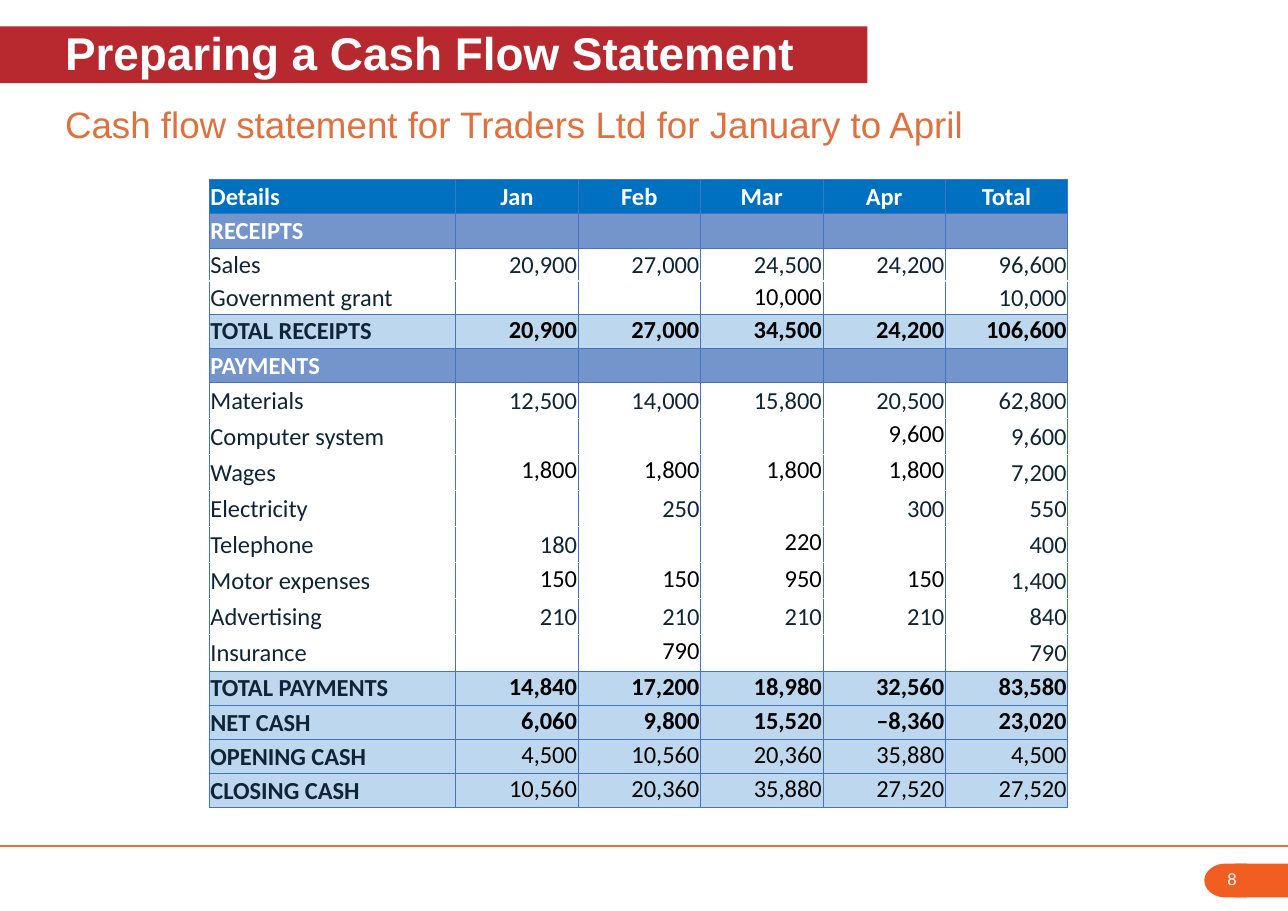
from dataclasses import dataclass

from lxml import etree
from pptx import Presentation
from pptx.dml.color import RGBColor
from pptx.enum.shapes import MSO_CONNECTOR, MSO_SHAPE
from pptx.enum.text import MSO_ANCHOR, MSO_AUTO_SIZE, PP_ALIGN
from pptx.oxml.ns import qn
from pptx.util import Pt

LEFT, CENTER, RIGHT = PP_ALIGN.LEFT, PP_ALIGN.CENTER, PP_ALIGN.RIGHT
TOP, MIDDLE = MSO_ANCHOR.TOP, MSO_ANCHOR.MIDDLE
NO_AUTOFIT = MSO_AUTO_SIZE.NONE
STRAIGHT = MSO_CONNECTOR.STRAIGHT
DELAY, RECTANGLE = MSO_SHAPE.FLOWCHART_DELAY, MSO_SHAPE.RECTANGLE


@dataclass(frozen=True)
class Theme:
    heading_font: str = "Arial"
    table_font: str = "Calibri"
    title_size: float = 30
    subtitle_size: float = 24
    table_size: float = 16
    page_size: float = 11
    white: str = "FFFFFF"
    black: str = "000000"
    ink: str = "0F2537"
    red: str = "B8292F"
    orange: str = "DF713E"
    tab_orange: str = "F25E22"
    header_blue: str = "0070C0"
    section_blue: str = "7395CB"
    total_blue: str = "BDD7EE"
    border_blue: str = "4472C4"


theme = Theme()


def style_text(paragraph, font, size, color, bold=False):
    for run in paragraph.runs:
        run.font.name = font
        run.font.size = Pt(size)
        run.font.bold = bold
        run.font.color.rgb = RGBColor.from_string(color)


def add_border(cell, side):
    border = etree.SubElement(cell._tc.get_or_add_tcPr(), qn(f"a:ln{side}"), w=str(Pt(0.5)))
    fill = etree.SubElement(border, qn("a:solidFill"))
    etree.SubElement(fill, qn("a:srgbClr"), val=theme.border_blue)


SLIDE_WIDTH = 841.68
presentation = Presentation()
presentation.slide_width = Pt(SLIDE_WIDTH)
presentation.slide_height = Pt(595.44)
slide = presentation.slides.add_slide(presentation.slide_layouts[1])
shapes = slide.shapes

# Footer rule and page tab
footer_rule = shapes.add_connector(STRAIGHT, Pt(0), Pt(553), Pt(SLIDE_WIDTH), Pt(553))
footer_rule.line.color.rgb = RGBColor.from_string(theme.orange)
footer_rule.line.width = Pt(0.75)
etree.SubElement(footer_rule._element.spPr, qn("a:effectLst"))

for outline, left, width, angle in ((DELAY, 787, 28, 180), (RECTANGLE, 807, 34.68, 0)):
    page_tab = shapes.add_shape(outline, Pt(left), Pt(564.4), Pt(width), Pt(22.2))
    page_tab.rotation = angle
    page_tab.shadow.inherit = False
    page_tab.fill.solid()
    page_tab.fill.fore_color.rgb = RGBColor.from_string(theme.tab_orange)
    page_tab.line.fill.background()

page_number = shapes.add_textbox(Pt(795), Pt(564.4), Pt(40), Pt(20)).text_frame
page_number.word_wrap = True
page_number.text = "8"
style_text(page_number.paragraphs[0], theme.heading_font, theme.page_size, theme.white)

# Title and subtitle
title, subtitle = shapes.title, slide.placeholders[1]
title.fill.solid()
title.fill.fore_color.rgb = RGBColor.from_string(theme.red)
for heading, words, top, width, height, size, color, bold in (
    (title, "Preparing a Cash Flow Statement", 17.2, 566.8, 37.2,
     theme.title_size, theme.white, True),
    (subtitle, "Cash flow statement for Traders Ltd for January to April", 64.2, SLIDE_WIDTH, 36.8,
     theme.subtitle_size, theme.orange, False),
):
    heading.left, heading.top = Pt(0), Pt(top)
    heading.width, heading.height = Pt(width), Pt(height)
    frame = heading.text_frame
    frame.text = words
    frame.word_wrap = True
    frame.auto_size = NO_AUTOFIT
    frame.vertical_anchor = MIDDLE
    frame.margin_left = frame.margin_top = frame.margin_right = Pt(0)
    frame.margin_bottom = Pt(3.6)
    line = frame.paragraphs[0]
    line.alignment = LEFT
    line.space_before = Pt(0)
    properties = line._p.get_or_add_pPr()
    properties.set("marL", str(Pt(42.5)))
    properties.set("indent", "0")
    etree.SubElement(properties, qn("a:buNone"))
    style_text(line, theme.heading_font, size, color, bold)

# Cash flow figures: kind of row, then its cells
HEADER, SECTION, ITEM, TOTAL, BALANCE = "header", "section", "item", "total", "balance"
cash_flow = [
    (HEADER, "Details", "Jan", "Feb", "Mar", "Apr", "Total"),
    (SECTION, "RECEIPTS", "", "", "", "", ""),
    (ITEM, "Sales", "20,900", "27,000", "24,500", "24,200", "96,600"),
    (ITEM, "Government grant", "", "", "10,000", "", "10,000"),
    (TOTAL, "TOTAL RECEIPTS", "20,900", "27,000", "34,500", "24,200", "106,600"),
    (SECTION, "PAYMENTS", "", "", "", "", ""),
    (ITEM, "Materials", "12,500", "14,000", "15,800", "20,500", "62,800"),
    (ITEM, "Computer system", "", "", "", "9,600", "9,600"),
    (ITEM, "Wages", "1,800", "1,800", "1,800", "1,800", "7,200"),
    (ITEM, "Electricity", "", "250", "", "300", "550"),
    (ITEM, "Telephone", "180", "", "220", "", "400"),
    (ITEM, "Motor expenses", "150", "150", "950", "150", "1,400"),
    (ITEM, "Advertising", "210", "210", "210", "210", "840"),
    (ITEM, "Insurance", "", "790", "", "", "790"),
    (TOTAL, "TOTAL PAYMENTS", "14,840", "17,200", "18,980", "32,560", "83,580"),
    (TOTAL, "NET CASH", "6,060", "9,800", "15,520", "–8,360", "23,020"),
    (BALANCE, "OPENING CASH", "4,500", "10,560", "20,360", "35,880", "4,500"),
    (BALANCE, "CLOSING CASH", "10,560", "20,360", "35,880", "27,520", "27,520"),
]
row_fills = {HEADER: theme.header_blue, SECTION: theme.section_blue, ITEM: theme.white,
             TOTAL: theme.total_blue, BALANCE: theme.total_blue}
# Item months set in black at the top of the cell
black_months = {"Government grant": {3}, "Computer system": {4}, "Wages": {1, 2, 3, 4},
                "Telephone": {3}, "Motor expenses": {1, 2, 3, 4}, "Insurance": {2}}
GRANT_ROW = 3
row_heights = [22.35 if kind != ITEM else 21.55 if number <= GRANT_ROW else 23.6
               for number, (kind, *_) in enumerate(cash_flow)]
column_widths = [161] + [80] * 5

# Cash flow table
table = shapes.add_table(len(cash_flow), len(column_widths), Pt(136.8), Pt(117.4),
                         Pt(sum(column_widths)), Pt(sum(row_heights))).table
table.first_row = table.horz_banding = False
for column, width in zip(table.columns, column_widths):
    column.width = Pt(width)

for number, (kind, *entries) in enumerate(cash_flow):
    table.rows[number].height = Pt(row_heights[number])
    joins_above = kind == ITEM and cash_flow[number - 1][0] == ITEM
    joins_below = kind == ITEM and cash_flow[number + 1][0] == ITEM
    for position, entry in enumerate(entries):
        cell = table.cell(number, position)
        is_label = position == 0
        is_black = not is_label and (
            kind in (TOTAL, BALANCE) or position in black_months.get(entries[0], ()))

        for side in "LRTB":
            if not (side == "T" and joins_above or side == "B" and joins_below):
                add_border(cell, side)
        cell.fill.solid()
        cell.fill.fore_color.rgb = RGBColor.from_string(row_fills[kind])
        cell.margin_left = cell.margin_top = cell.margin_right = Pt(0.72)
        cell.margin_bottom = Pt(0)
        cell.vertical_anchor = TOP if is_black else MIDDLE

        amount = cell.text_frame.paragraphs[0]
        if not entry:
            end_mark = etree.SubElement(amount._p, qn("a:endParaRPr"))
            end_mark.set("sz", str(theme.table_size * 100))
            continue
        amount.text = entry
        amount.alignment = LEFT if is_label else CENTER if kind == HEADER else RIGHT
        color = (theme.white if kind in (HEADER, SECTION)
                 else theme.black if is_black else theme.ink)
        bold = kind in (HEADER, SECTION, TOTAL) or (kind == BALANCE and is_label)
        style_text(amount, theme.table_font, theme.table_size, color, bold)

presentation.save("out.pptx")
